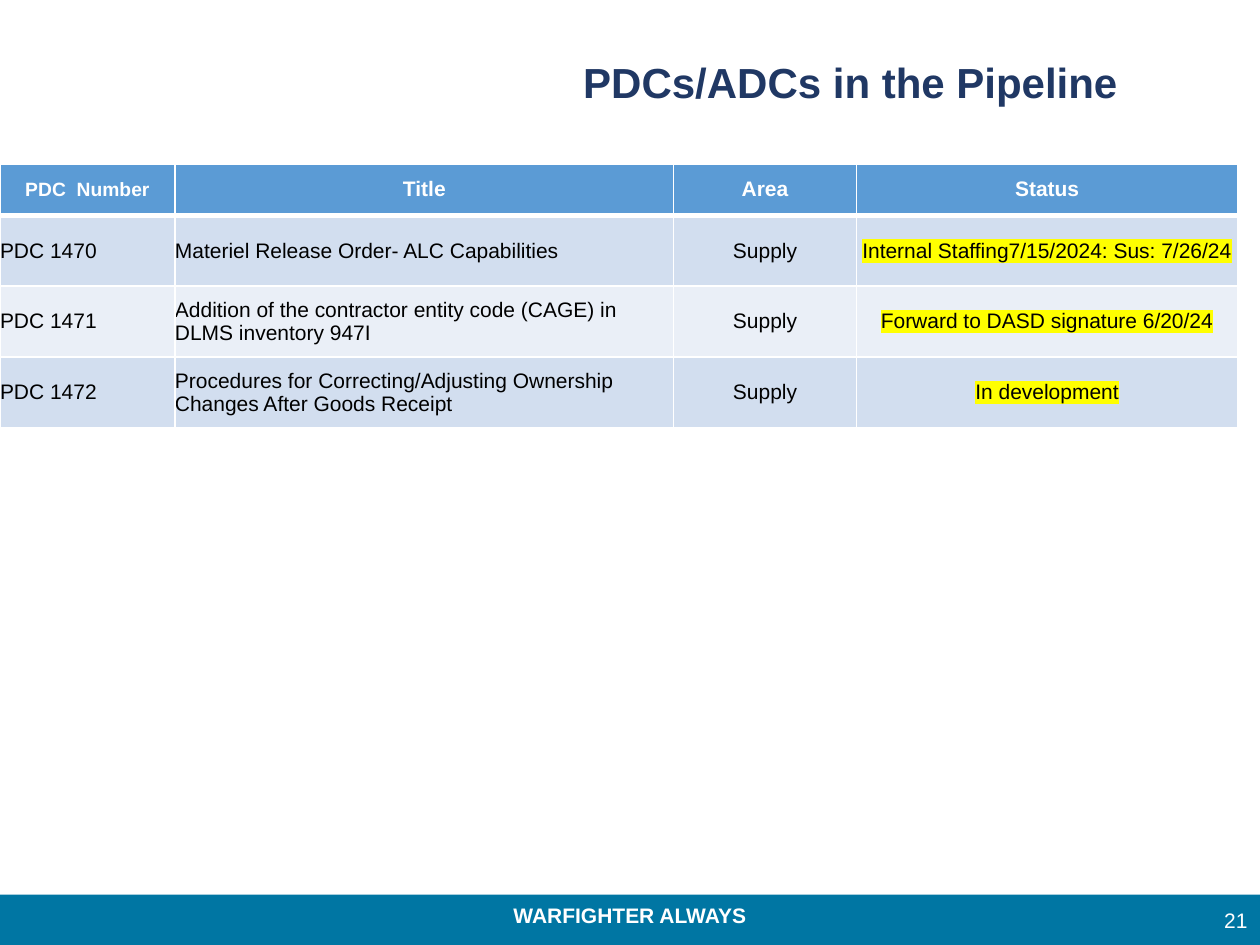
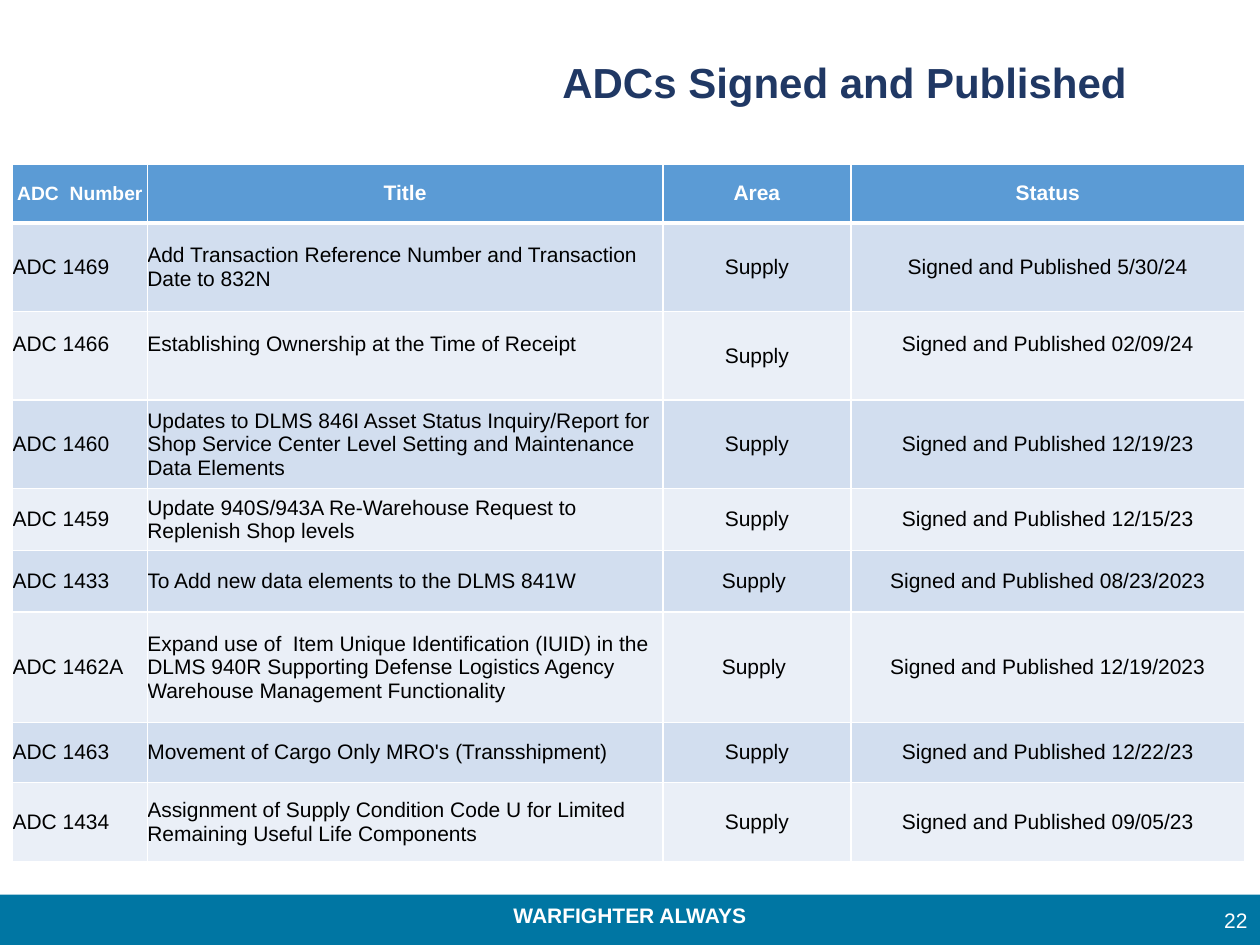
"""Build two slides listing pending and published change documents."""
from lxml.etree import SubElement
from pptx import Presentation
from pptx.dml.color import RGBColor
from pptx.enum.shapes import MSO_SHAPE
from pptx.enum.text import MSO_ANCHOR, PP_ALIGN
from pptx.oxml.ns import qn
from pptx.util import Pt

WHITE = RGBColor(0xFF, 0xFF, 0xFF)
BLACK = RGBColor(0x00, 0x00, 0x00)
NAVY = RGBColor(0x20, 0x38, 0x64)
TEAL = RGBColor(0x00, 0x76, 0xA3)
HEADER_BLUE = RGBColor(0x5B, 0x9B, 0xD5)
BAND_DARK = RGBColor(0xD2, 0xDE, 0xEF)
BAND_LIGHT = RGBColor(0xEA, 0xEF, 0xF7)
YELLOW = RGBColor(0xFF, 0xFF, 0x00)

PAGES = [
    {
        "title": "PDCs/ADCs in the Pipeline",
        "number": "21",
        "left": 0,
        "widths": [100, 285, 104.4, 218],
        "heights": [29.5, 40.5, 40.5, 40.5],
        "highlight": True,
        "rows": [
            ("PDC  Number", "Title", "Area", "Status"),
            ("PDC 1470", "Materiel Release Order- ALC Capabilities", "Supply",
             "Internal Staffing7/15/2024: Sus: 7/26/24"),
            ("PDC 1471", "Addition of the contractor entity code (CAGE) in DLMS inventory 947I",
             "Supply", "Forward to DASD signature 6/20/24"),
            ("PDC 1472", "Procedures for Correcting/Adjusting Ownership Changes After Goods Receipt",
             "Supply", "In development"),
        ],
    },
    {
        "title": "ADCs Signed and Published ",
        "number": "22",
        "left": 7.2,
        "widths": [77, 294.6, 107.5, 225],
        "heights": [33.8, 50.6, 50.6, 50.6, 35.3, 35.3, 63.2, 34.2, 45.5],
        "highlight": False,
        "rows": [
            ("ADC  Number", "Title", "Area", "Status"),
            ("ADC 1469", "Add Transaction Reference Number and Transaction Date to 832N ",
             "Supply", "Signed and Published 5/30/24"),
            ("ADC 1466", "Establishing Ownership at the Time of Receipt",
             "Supply", "Signed and Published 02/09/24"),
            ("ADC 1460", "Updates to DLMS 846I Asset Status Inquiry/Report for Shop Service Center "
             "Level Setting and Maintenance Data Elements ",
             "Supply", "Signed and Published 12/19/23"),
            ("ADC 1459", "Update 940S/943A Re-Warehouse Request to Replenish Shop levels ",
             "Supply", "Signed and Published 12/15/23"),
            ("ADC 1433", "To Add new data elements to the DLMS 841W",
             "Supply ", "Signed and Published 08/23/2023"),
            ("ADC 1462A", "Expand use of  Item Unique Identification (IUID) in the DLMS 940R "
             "Supporting Defense Logistics Agency Warehouse Management Functionality",
             "Supply ", "Signed and Published 12/19/2023"),
            ("ADC 1463", "Movement of Cargo Only MRO's (Transshipment)",
             "Supply", "Signed and Published 12/22/23"),
            ("ADC 1434", "Assignment of Supply Condition Code U for Limited Remaining Useful Life Components",
             "Supply", "Signed and Published 09/05/23"),
        ],
    },
]


def write_text(frame, text, size, color, bold, alignment):
    paragraph = frame.paragraphs[0]
    paragraph.alignment = alignment
    paragraph.font.name = "Arial"
    paragraph.font.size = Pt(size)
    paragraph.font.bold = bold
    paragraph.font.color.rgb = color
    span = paragraph.add_run()
    span.text = text
    return span


def add_color(parent, tag, color):
    SubElement(SubElement(parent, qn(tag)), qn("a:srgbClr"), val=str(color))


deck = Presentation()
deck.slide_width = Pt(720)
deck.slide_height = Pt(540)

for page in PAGES:
    slide = deck.slides.add_slide(deck.slide_layouts[6])

    band = slide.shapes.add_shape(MSO_SHAPE.RECTANGLE, Pt(0), Pt(511.2), Pt(720), Pt(28.8))
    band.shadow.inherit = False
    band.fill.solid()
    band.fill.fore_color.rgb = TEAL
    band.line.fill.background()

    labels = [
        ("WARFIGHTER ALWAYS", (0, 511.9, 720, 21.8), 12, WHITE, True, PP_ALIGN.CENTER, MSO_ANCHOR.TOP),
        (page["title"], (288, 28.8, 396, 64.8), 24, NAVY, True, PP_ALIGN.CENTER, MSO_ANCHOR.TOP),
        (page["number"], (684, 511.2, 36, 28.8), 12, WHITE, False, PP_ALIGN.RIGHT, MSO_ANCHOR.MIDDLE),
    ]
    for text, place, size, color, bold, alignment, anchor in labels:
        box = slide.shapes.add_textbox(*[Pt(length) for length in place])
        box.text_frame.word_wrap = True
        box.text_frame.vertical_anchor = anchor
        write_text(box.text_frame, text, size, color, bold, alignment)

    widths, heights, rows = page["widths"], page["heights"], page["rows"]
    table = slide.shapes.add_table(
        len(rows), len(widths), Pt(page["left"]), Pt(93.6), Pt(sum(widths)), Pt(sum(heights))
    ).table
    for column, width in zip(table.columns, widths):
        column.width = Pt(width)

    for row_index, texts in enumerate(rows):
        table.rows[row_index].height = Pt(heights[row_index])
        is_header = row_index == 0
        for column_index, text in enumerate(texts):
            cell = table.cell(row_index, column_index)
            cell.vertical_anchor = MSO_ANCHOR.MIDDLE
            cell.margin_left = cell.margin_right = cell.margin_top = cell.margin_bottom = Pt(0)
            if texts[0] == "ADC 1466" and column_index != 2:
                cell.margin_bottom = Pt(13.8)

            properties = cell._tc.get_or_add_tcPr()
            for side in "LRTB":
                thick = (row_index, side) in ((0, "B"), (1, "T"))
                line = SubElement(properties, qn(f"a:ln{side}"), w=str(Pt(3 if thick else 1)))
                add_color(line, "a:solidFill", WHITE)
            cell.fill.solid()
            band_color = BAND_DARK if row_index % 2 else BAND_LIGHT
            cell.fill.fore_color.rgb = HEADER_BLUE if is_header else band_color

            span = write_text(
                cell.text_frame,
                text,
                11 if is_header and column_index == 0 else 12,
                WHITE if is_header else BLACK,
                is_header,
                PP_ALIGN.CENTER if is_header or column_index > 1 else PP_ALIGN.LEFT,
            )
            if page["highlight"] and not is_header and column_index == 3:
                add_color(span._r.get_or_add_rPr(), "a:highlight", YELLOW)

deck.save("out.pptx")
